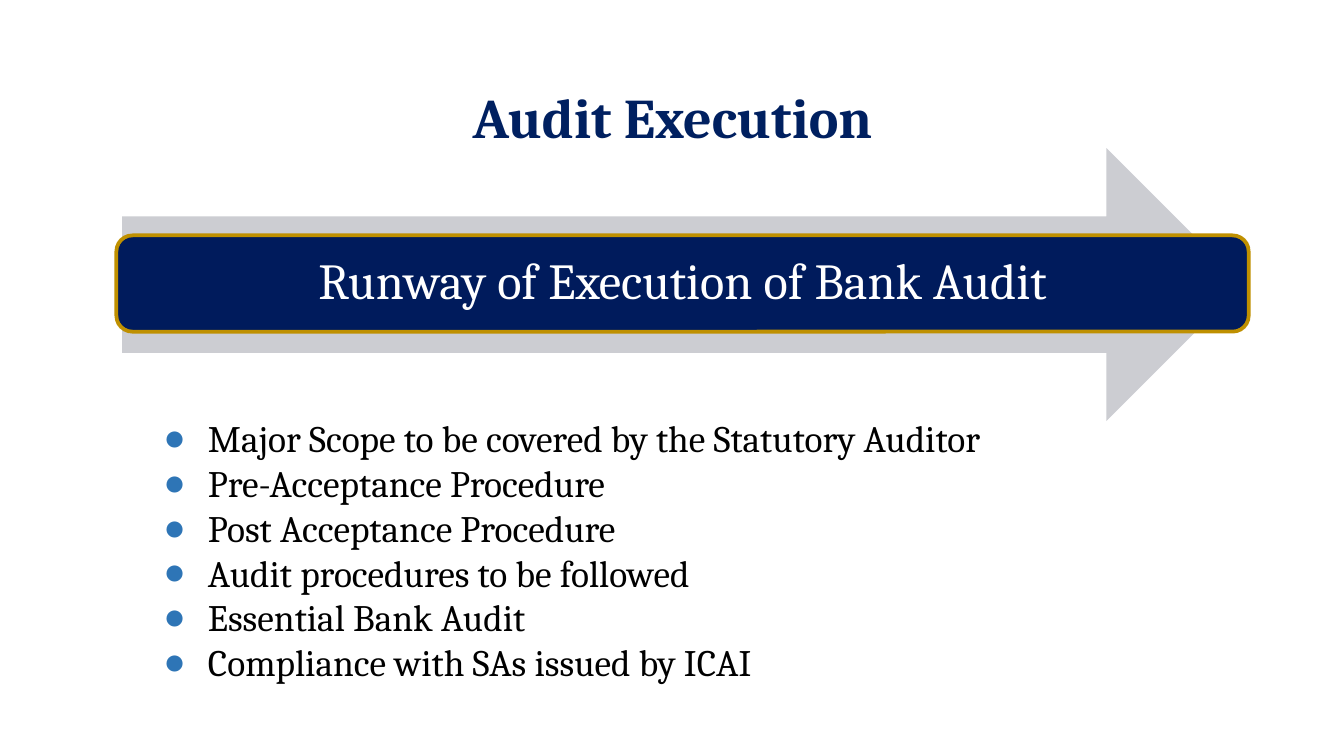
from dataclasses import dataclass

from lxml.etree import SubElement
from pptx import Presentation
from pptx.dml.color import RGBColor
from pptx.enum.shapes import MSO_SHAPE as SHAPE
from pptx.enum.text import MSO_ANCHOR as ANCHOR, PP_ALIGN as ALIGN
from pptx.oxml.ns import qn
from pptx.util import Cm, Pt

FONT = "Cambria"


@dataclass
class Box:
    left: float
    top: float
    width: float
    height: float

    def lengths(self) -> list:
        return [Cm(v) for v in (self.left, self.top, self.width, self.height)]


TOPICS = [
    "Major Scope to be covered by the Statutory Auditor",
    "Pre-Acceptance Procedure",
    "Post Acceptance Procedure",
    "Audit procedures to be followed",
    "Essential Bank Audit",
    "Compliance with SAs issued by ICAI",
]


def rgb(color: str) -> RGBColor:
    return RGBColor.from_string(color)


def add_block(s, kind, box: Box, fill: str, line: str | None = None):
    sp = s.shapes.add_shape(kind, *box.lengths())
    sp.shadow.inherit = False
    sp.fill.solid()
    sp.fill.fore_color.rgb = rgb(fill)
    if line:
        sp.line.color.rgb = rgb(line)
        sp.line.width = Pt(2)
    else:
        sp.line.fill.background()
    return sp


def add_bullet(p, color: str) -> None:
    pPr = p._p.get_or_add_pPr()
    pPr.set("marL", str(Cm(1.27)))
    pPr.set("indent", str(Cm(-0.84)))
    bu_clr = SubElement(pPr, qn("a:buClr"))
    SubElement(bu_clr, qn("a:srgbClr"), val=color)
    SubElement(pPr, qn("a:buFont"), typeface="Arial")
    SubElement(pPr, qn("a:buChar"), char="●")


def write(tf, text: str, *, size: float, color: str, bold: bool = False,
          align=ALIGN.CENTER, anchor=ANCHOR.TOP, inset: float = 0.25,
          bullet: str | None = None, spacing: float | None = None) -> None:
    tf.word_wrap = True
    tf.vertical_anchor = anchor
    tf.margin_left = tf.margin_right = Cm(inset)
    tf.margin_top = tf.margin_bottom = Cm(inset)
    for i, line in enumerate(text.split("\n")):
        p = tf.add_paragraph() if i else tf.paragraphs[0]
        p.alignment = align
        if spacing:
            p.line_spacing = spacing
        if bullet:
            add_bullet(p, bullet)
        r = p.add_run()
        r.text = line
        r.font.name = FONT
        r.font.size = Pt(size)
        r.font.bold = bold
        r.font.color.rgb = rgb(color)


def add_text(s, box: Box, text: str, **fmt) -> None:
    write(s.shapes.add_textbox(*box.lengths()).text_frame, text, **fmt)


def main() -> None:
    prs = Presentation()
    prs.slide_width, prs.slide_height = Cm(25.4), Cm(14.29)
    s = prs.slides.add_slide(prs.slide_layouts[6])

    add_block(s, SHAPE.RIGHT_ARROW, Box(2.31, 2.8, 21.18, 5.16), "CCCDD2")
    banner = add_block(s, SHAPE.ROUNDED_RECTANGLE, Box(2.2, 4.45, 21.4, 1.82),
                       "001B5C", line="BF9000")
    write(banner.text_frame, "Runway of Execution of Bank Audit", size=27,
          color="FFFFFF", anchor=ANCHOR.MIDDLE, inset=0.28, spacing=0.9)

    add_text(s, Box(2.0, 1.32, 21.42, 1.6), "Audit Execution",
             size=30, color="002060", bold=True)
    add_text(s, Box(2.41, 7.6, 21.95, 5.16), "\n".join(TOPICS), size=20,
             color="000000", align=ALIGN.JUSTIFY, bullet="2E75B6")
    prs.save("out.pptx")


if __name__ == "__main__":
    main()
